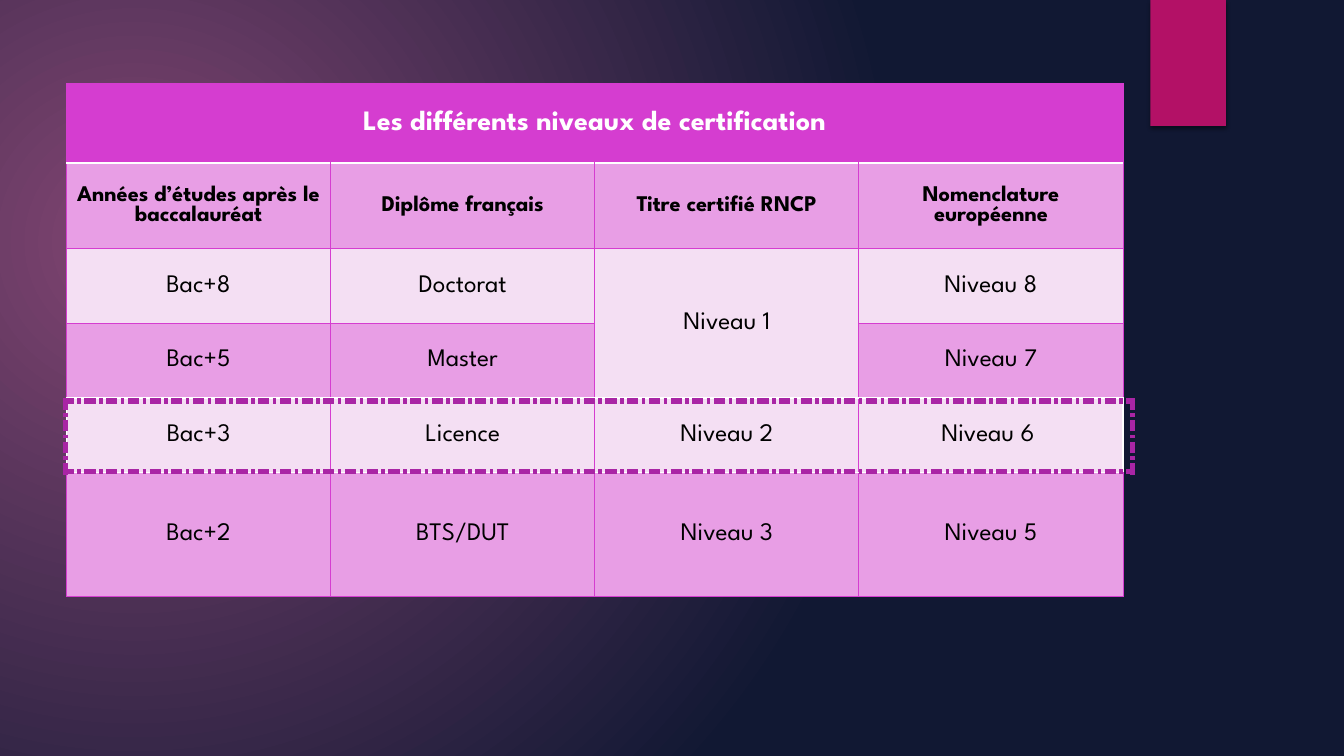
from lxml.etree import SubElement
from pptx import Presentation
from pptx.dml.color import RGBColor
from pptx.enum.shapes import MSO_SHAPE as Shape
from pptx.enum.text import MSO_ANCHOR as Anchor, PP_ALIGN as Align
from pptx.oxml.ns import qn
from pptx.util import Inches, Pt

FONT = "League Spartan"
ORCHID = RGBColor(0xD5, 0x3D, 0xD0)
PINK = RGBColor(0xE8, 0x9E, 0xE5)
PALE = RGBColor(0xF4, 0xDF, 0xF3)
PURPLE = RGBColor(0xA9, 0x25, 0xA5)
MAGENTA = RGBColor(0xB3, 0x11, 0x66)
PLUM = RGBColor(0x81, 0x45, 0x72)
NAVY = RGBColor(0x11, 0x18, 0x33)
WHITE = RGBColor(0xFF, 0xFF, 0xFF)
BLACK = RGBColor(0, 0, 0)

TITLE = "Les différents niveaux de certification"
LEVELS = [
    ["Années d’études après le baccalauréat", "Diplôme français",
     "Titre certifié RNCP", "Nomenclature européenne"],
    ["Bac+8", "Doctorat", "Niveau 1", "Niveau 8"],
    ["Bac+5", "Master", "", "Niveau 7"],
    ["Bac+3", "Licence", "Niveau 2", "Niveau 6 "],
    ["Bac+2", "BTS/DUT", "Niveau 3", "Niveau 5"],
]
ROW_HEIGHTS = [0.79, 0.85, 0.74, 0.74, 0.74, 1.23]
COLUMN_WIDTH = 2.62
LICENCE_ROW = 4
SIDES = ("L", "R", "T", "B")


def paint_background(slide):
    fill = slide.background.fill
    fill.gradient()
    for stop, colour in zip(fill.gradient_stops, (PLUM, NAVY)):
        stop.color.rgb = colour
    gradient = slide.background._cSld.find(".//" + qn("a:gradFill"))
    gradient.remove(gradient.find(qn("a:lin")))
    circle = SubElement(gradient, qn("a:path"), path="circle")
    SubElement(circle, qn("a:fillToRect"),
               l="45000", t="65000", r="125000", b="100000")


def add_ribbon(slide):
    ribbon = slide.shapes.add_shape(
        Shape.RECTANGLE, Inches(11.41), 0, Inches(0.75), Inches(1.25))
    ribbon.fill.solid()
    ribbon.fill.fore_color.rgb = MAGENTA
    ribbon.line.fill.background()
    ribbon.shadow.inherit = False
    effects = ribbon._element.spPr.find(qn("a:effectLst"))
    shadow = SubElement(effects, qn("a:outerShdw"), blurRad=str(Pt(3)),
                        dist=str(Pt(2)), dir="5400000", rotWithShape="0")
    tint = SubElement(shadow, qn("a:srgbClr"), val=str(BLACK))
    SubElement(tint, qn("a:alpha"), val="45000")


def add_plain_table(slide, left, top, widths, heights):
    """Add a table without banding, sized by its columns and rows."""
    table = slide.shapes.add_table(
        len(heights), len(widths), Inches(left), Inches(top),
        Inches(sum(widths)), Inches(sum(heights))).table
    table.first_row = table.horz_banding = False
    for column, width in zip(table.columns, widths):
        column.width = Inches(width)
    for row, height in zip(table.rows, heights):
        row.height = Inches(height)
    return table


def set_borders(cell, borders, dash="solid"):
    """Draw the borders, given as side: (colour, points); call before filling."""
    properties = cell._tc.get_or_add_tcPr()
    for side in SIDES:
        colour, points = borders[side]
        line = SubElement(properties, qn("a:ln" + side), w=str(Pt(points)))
        solid = SubElement(line, qn("a:solidFill"))
        SubElement(solid, qn("a:srgbClr"), val=str(colour))
        SubElement(line, qn("a:prstDash"), val=dash)


def level_borders(row, column, last_column):
    borders = dict.fromkeys(SIDES, (ORCHID, 0.75))
    if row == 0:
        borders["B"] = (WHITE, 1.5)
    if row == 1:
        borders["T"] = (WHITE, 1.5)
    if row in (LICENCE_ROW - 1, LICENCE_ROW):
        borders["B"] = (WHITE, 1)
    if row in (LICENCE_ROW, LICENCE_ROW + 1):
        borders["T"] = (WHITE, 1)
    if row == LICENCE_ROW and column == 0:
        borders["L"] = (WHITE, 1)
    if row == LICENCE_ROW and column == last_column:
        borders["R"] = (WHITE, 1)
    return borders


def write_cell(cell, text, size, colour, bold):
    cell.vertical_anchor = Anchor.MIDDLE
    paragraph = cell.text_frame.paragraphs[0]
    paragraph.alignment = Align.CENTER
    run = paragraph.add_run()
    run.text = text
    run.font.name = FONT
    run.font.size = Pt(size)
    run.font.bold = bold
    run.font.color.rgb = colour


def add_levels_table(slide):
    columns = len(LEVELS[0])
    table = add_plain_table(slide, 0.66, 0.83,
                            [COLUMN_WIDTH] * columns, ROW_HEIGHTS)
    rows = [[TITLE] + [""] * (columns - 1)] + LEVELS
    for r, texts in enumerate(rows):
        size, colour, bold = {0: (20, WHITE, True),
                              1: (16, BLACK, True)}.get(r, (18, BLACK, False))
        for c, text in enumerate(texts):
            cell = table.cell(r, c)
            set_borders(cell, level_borders(r, c, columns - 1))
            cell.fill.solid()
            cell.fill.fore_color.rgb = (
                ORCHID if r == 0 else PINK if r % 2 else PALE)
            if text:
                write_cell(cell, text, size, colour, bold)
    table.cell(0, 0).merge(table.cell(0, columns - 1))
    table.cell(2, 2).merge(table.cell(3, 2))


def add_licence_frame(slide):
    cell = add_plain_table(slide, 0.65, 3.98, [10.58], [0.7]).cell(0, 0)
    set_borders(cell, dict.fromkeys(SIDES, (PURPLE, 4.5)), "sysDashDot")
    cell.fill.background()


def main():
    deck = Presentation()
    deck.slide_width, deck.slide_height = Inches(13.33), Inches(7.5)
    slide = deck.slides.add_slide(deck.slide_layouts[6])
    paint_background(slide)
    add_ribbon(slide)
    add_levels_table(slide)
    add_licence_frame(slide)
    deck.save("out.pptx")


if __name__ == "__main__":
    main()
